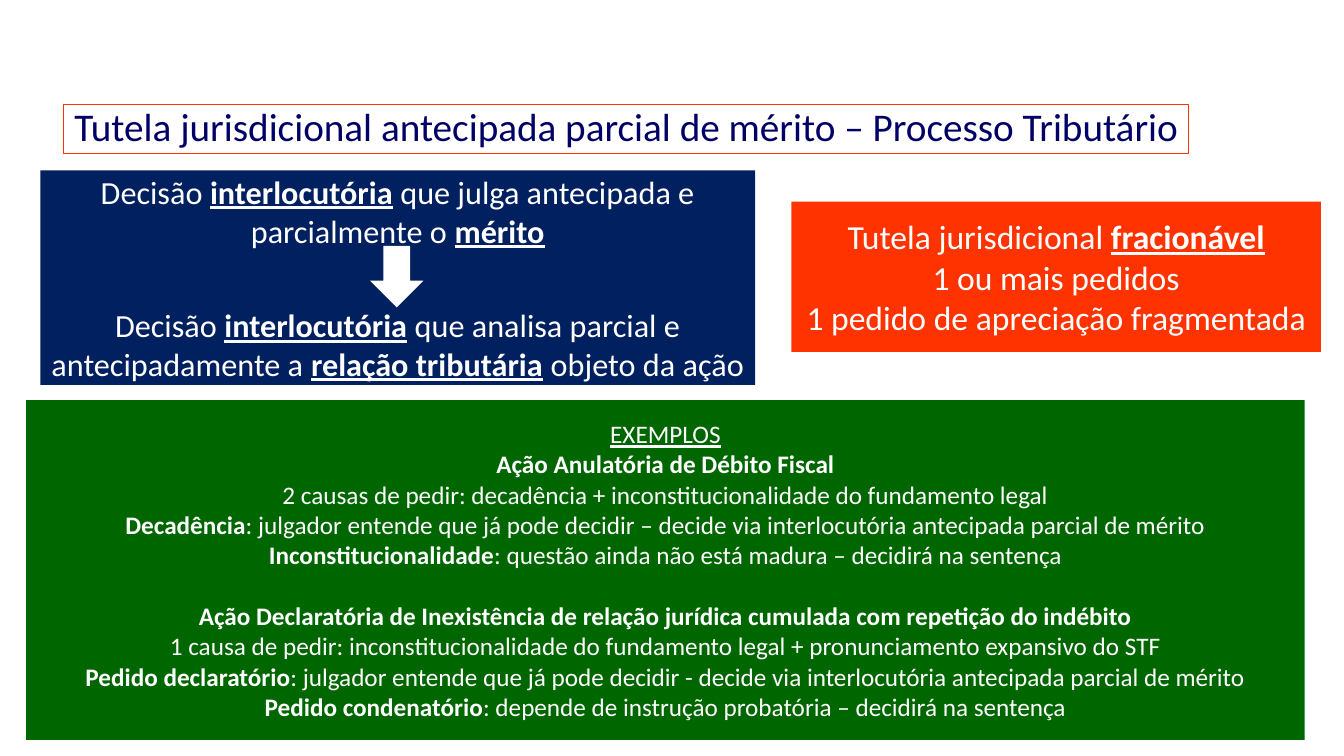
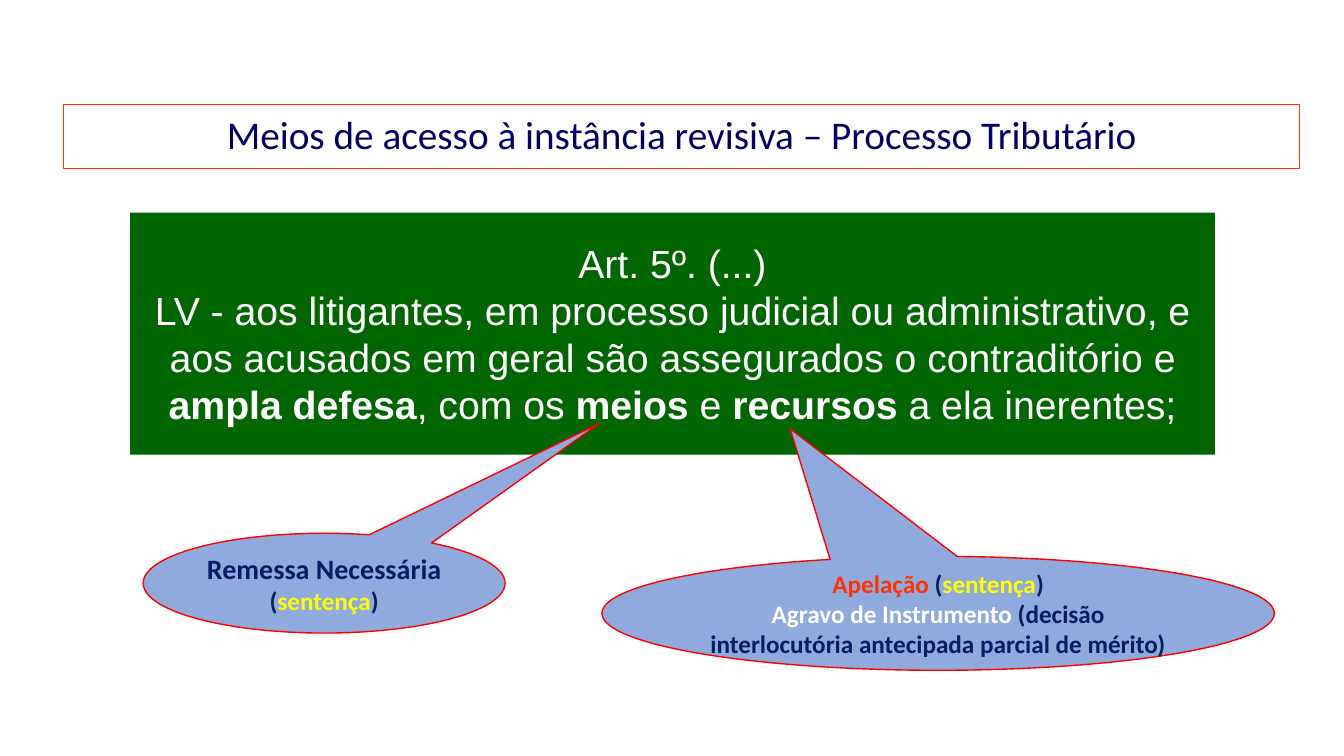
from dataclasses import dataclass

from pptx import Presentation
from pptx.dml.color import RGBColor
from pptx.enum.shapes import MSO_SHAPE
from pptx.enum.text import MSO_ANCHOR, MSO_AUTO_SIZE, PP_ALIGN
from pptx.shapes.autoshape import Shape
from pptx.slide import Slide
from pptx.util import Inches, Pt


# Shared look
@dataclass(frozen=True)
class Theme:
    navy: RGBColor = RGBColor(0x00, 0x20, 0x60)
    title: RGBColor = RGBColor(0x00, 0x00, 0x66)
    orange: RGBColor = RGBColor(0xFF, 0x33, 0x00)
    green: RGBColor = RGBColor(0x00, 0x66, 0x00)
    white: RGBColor = RGBColor(0xFF, 0xFF, 0xFF)
    blue: RGBColor = RGBColor(0x8F, 0xAA, 0xDC)
    red: RGBColor = RGBColor(0xFF, 0x00, 0x00)
    yellow: RGBColor = RGBColor(0xFF, 0xFF, 0x00)
    font: str = "Calibri"
    law_font: str = "Arial"
    title_size: int = 28
    tutela_size: int = 24
    decision_size: int = 23
    callout_size: int = 20
    small_size: int = 18


THEME = Theme()


@dataclass(frozen=True)
class Box:
    left: float
    top: float
    width: float
    height: float


@dataclass(frozen=True)
class Span:
    text: str
    bold: bool | None = None
    underline: bool | None = None
    color: RGBColor | None = None


@dataclass(frozen=True)
class Line:
    spans: tuple[Span, ...]
    size: int
    space_before: int = 0


@dataclass(frozen=True)
class Panel:
    box: Box
    fill: RGBColor
    lines: tuple[Line, ...] = ()
    font: str = THEME.font
    color: RGBColor = THEME.white
    bold: bool = False
    preset: MSO_SHAPE = MSO_SHAPE.RECTANGLE
    border: RGBColor | None = None
    tip: tuple[float, float] | None = None


def strong(text: str) -> Span:
    return Span(text, bold=True)


def key(text: str) -> Span:
    return Span(text, bold=True, underline=True)


def line(size: int, *spans: Span | str, space_before: int = 0) -> Line:
    parts = tuple(Span(span) if isinstance(span, str) else span for span in spans)
    return Line(parts, size, space_before)


def place(shape: Shape, box: Box) -> None:
    shape.left, shape.top = Inches(box.left), Inches(box.top)
    shape.width, shape.height = Inches(box.width), Inches(box.height)


def add_title(slide: Slide, text: str, box: Box) -> None:
    title = slide.shapes.title
    place(title, box)
    title.line.color.rgb = THEME.orange
    title.line.width = Pt(0.75)
    frame = title.text_frame
    frame.text = text
    frame.auto_size = MSO_AUTO_SIZE.NONE
    frame.vertical_anchor = MSO_ANCHOR.MIDDLE
    paragraph = frame.paragraphs[0]
    paragraph.alignment = PP_ALIGN.CENTER
    paragraph.line_spacing = 0.9
    paragraph.font.name = THEME.font
    paragraph.font.size = Pt(THEME.title_size)
    paragraph.font.color.rgb = THEME.title


def write_lines(shape: Shape, panel: Panel) -> None:
    frame = shape.text_frame
    frame.word_wrap = True
    frame.vertical_anchor = MSO_ANCHOR.MIDDLE
    for index, text_line in enumerate(panel.lines):
        paragraph = frame.add_paragraph() if index else frame.paragraphs[0]
        paragraph.alignment = PP_ALIGN.CENTER
        if text_line.space_before:
            paragraph.space_before = Pt(text_line.space_before)
        paragraph.font.name = panel.font
        paragraph.font.size = Pt(text_line.size)
        paragraph.font.bold = panel.bold
        paragraph.font.color.rgb = panel.color
        for span in text_line.spans:
            run = paragraph.add_run()
            run.text = span.text
            run.font.bold = span.bold
            run.font.underline = span.underline
            if span.color is not None:
                run.font.color.rgb = span.color


def add_panel(slide: Slide, panel: Panel) -> None:
    box = panel.box
    shape = slide.shapes.add_shape(
        panel.preset, Inches(box.left), Inches(box.top), Inches(box.width), Inches(box.height)
    )
    shape.shadow.inherit = False
    shape.fill.solid()
    shape.fill.fore_color.rgb = panel.fill
    if panel.border is None:
        shape.line.fill.background()
    else:
        shape.line.color.rgb = panel.border
        shape.line.width = Pt(1)
    if panel.tip is not None:
        shape.adjustments[0], shape.adjustments[1] = panel.tip
    write_lines(shape, panel)


def callout(box: Box, tip: tuple[float, float], *lines: Line) -> Panel:
    return Panel(box, THEME.blue, lines, color=THEME.navy, bold=True,
                 preset=MSO_SHAPE.OVAL_CALLOUT, border=THEME.red, tip=tip)


# Slide 1: partial early judgment
DECISION = Panel(Box(0.4, 1.69, 7.09, 2.13), THEME.navy, (
    line(THEME.decision_size, "Decisão ", key("interlocutória"),
         " que julga antecipada e parcialmente o ", key("mérito")),
    line(THEME.decision_size, "Decisão ", key("interlocutória"),
         " que analisa parcial e antecipadamente a ", key("relação tributária"),
         " objeto da ação", space_before=40),
))
TUTELA = Panel(Box(7.85, 2, 5.25, 1.49), THEME.orange, (
    line(THEME.tutela_size, "Tutela jurisdicional ", key("fracionável")),
    line(THEME.tutela_size, "1 ou mais pedidos"),
    line(THEME.tutela_size, "1 pedido de apreciação fragmentada"),
))
EXAMPLES = Panel(Box(0.26, 3.97, 12.68, 3.37), THEME.green, (
    line(THEME.small_size, Span("EXEMPLOS", underline=True)),
    line(THEME.small_size, strong("Ação Anulatória de Débito Fiscal")),
    line(THEME.small_size,
         "2 causas de pedir: decadência + inconstitucionalidade do fundamento legal"),
    line(THEME.small_size, strong("Decadência"),
         ": julgador entende que já pode decidir – decide via interlocutória "
         "antecipada parcial de mérito"),
    line(THEME.small_size, strong("Inconstitucionalidade"),
         ": questão ainda não está madura – decidirá na sentença"),
    line(THEME.small_size,
         strong("Ação Declaratória de Inexistência de relação jurídica cumulada "
                "com repetição do indébito"), space_before=22),
    line(THEME.small_size,
         "1 causa de pedir: inconstitucionalidade do fundamento legal + "
         "pronunciamento expansivo do STF"),
    line(THEME.small_size, strong("Pedido declaratório"),
         ": julgador entende que já pode decidir - decide via interlocutória "
         "antecipada parcial de mérito"),
    line(THEME.small_size, strong("Pedido condenatório"),
         ": depende de instrução probatória – decidirá na sentença"),
))
ARROW = Panel(Box(3.67, 2.44, 0.53, 0.61), THEME.white, preset=MSO_SHAPE.DOWN_ARROW)

# Slide 2: means of review
LAW = Panel(Box(1.29, 2.11, 10.76, 2.4), THEME.green, (
    line(THEME.title_size, "Art. 5º. (...)"),
    line(THEME.title_size,
         "LV - aos litigantes, em processo judicial ou administrativo, e aos acusados "
         "em geral são assegurados o contraditório e ", strong("ampla defesa"),
         ", com os ", strong("meios"), " e ", strong("recursos"), " a ela inerentes;"),
), font=THEME.law_font)
SENTENCE = Span("sentença", color=THEME.yellow)
REVIEW = callout(
    Box(1.42, 5.29, 3.59, 0.99), (0.76, -1.6),
    line(THEME.callout_size, "Remessa Necessária"),
    line(THEME.small_size, "(", SENTENCE, ")"),
)
APPEAL = callout(
    Box(5.97, 5.52, 6.67, 1.13), (-0.22, -1.62),
    line(THEME.small_size, Span("Apelação", color=THEME.orange), " (", SENTENCE, ")"),
    line(THEME.small_size, Span("Agravo de Instrumento ", color=THEME.white),
         "(decisão interlocutória antecipada parcial de mérito)"),
)

SLIDES = (
    ("Tutela jurisdicional antecipada parcial de mérito – Processo Tributário",
     Box(0.63, 1.04, 11.16, 0.48), (DECISION, TUTELA, EXAMPLES, ARROW)),
    ("Meios de acesso à instância revisiva – Processo Tributário",
     Box(0.63, 1.04, 12.26, 0.63), (LAW, REVIEW, APPEAL)),
)


def main() -> None:
    presentation = Presentation()
    presentation.slide_width, presentation.slide_height = Inches(13.33), Inches(7.5)
    title_only = presentation.slide_layouts[5]
    for title, title_box, panels in SLIDES:
        slide = presentation.slides.add_slide(title_only)
        add_title(slide, title, title_box)
        for panel in panels:
            add_panel(slide, panel)
    presentation.save("out.pptx")


if __name__ == "__main__":
    main()
